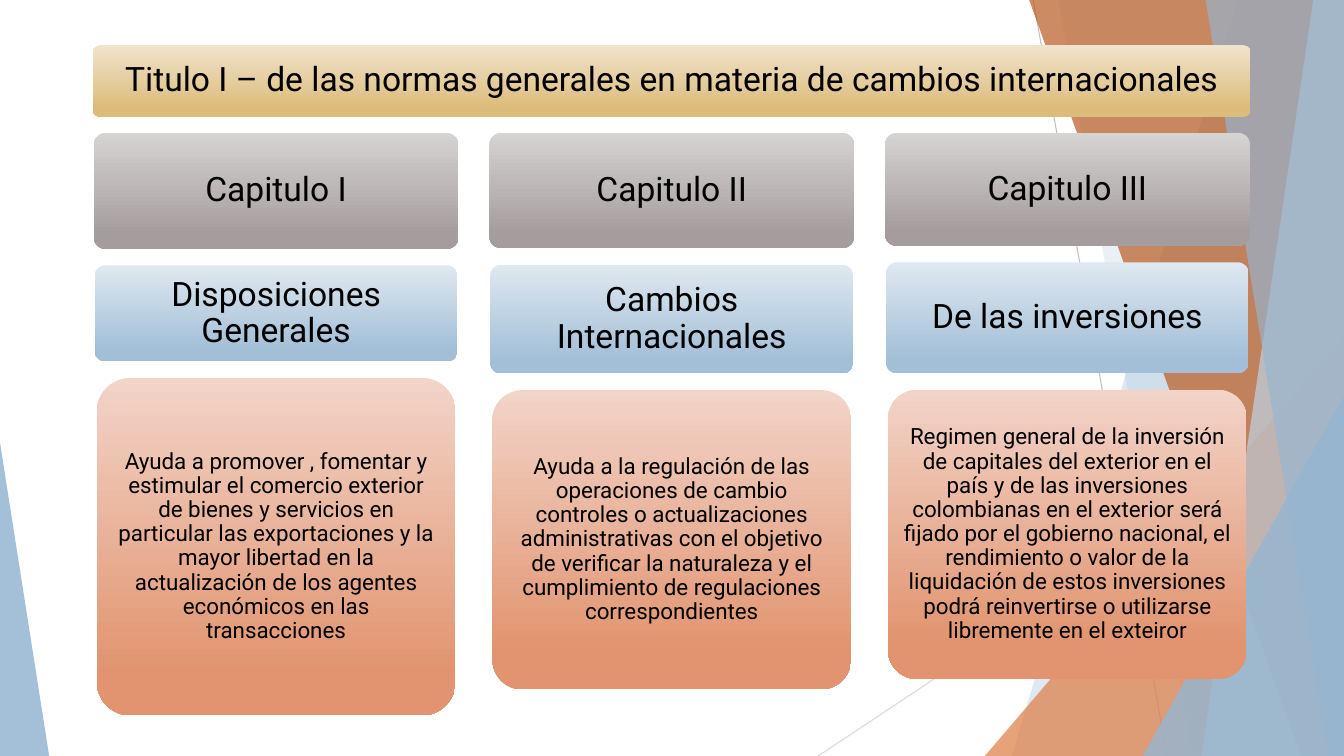
"""Build a slide of three chapter columns under a title bar."""
from lxml.etree import SubElement
from pptx import Presentation
from pptx.dml.color import RGBColor
from pptx.enum.shapes import MSO_CONNECTOR, MSO_SHAPE
from pptx.enum.text import MSO_ANCHOR, PP_ALIGN
from pptx.oxml.ns import qn
from pptx.util import Cm, Pt

TITLE = "Titulo I – de las normas generales en materia de cambios internacionales"
CHAPTERS = [
    {"heights": (2.92, 2.41, 8.51), "texts": (
        "Capitulo I",
        "Disposiciones Generales",
        "Ayuda a promover , fomentar y estimular el comercio exterior de bienes y "
        "servicios en particular las exportaciones y la mayor libertad en la "
        "actualización de los agentes económicos en las transacciones")},
    {"heights": (2.9, 2.74, 7.54), "texts": (
        "Capitulo II",
        "Cambios Internacionales",
        "Ayuda a la regulación de las operaciones de cambio controles o "
        "actualizaciones administrativas con el objetivo de verificar la naturaleza "
        "y el cumplimiento de regulaciones correspondientes")},
    {"heights": (2.84, 2.79, 7.29), "texts": (
        "Capitulo III",
        "De las inversiones",
        "Regimen general de la inversión de capitales del exterior en el país y de "
        "las inversiones colombianas en el exterior será fijado por el gobierno "
        "nacional, el rendimiento o valor de la liquidación de estos inversiones "
        "podrá reinvertirse o utilizarse libremente en el exteiror")},
]
THEME = {
    "font": "Roboto", "text": "000000", "heading": 24, "body": 16,
    "title": ("F0E3CD", "DCBC7B"),
    "rows": (("D6D3D3", "A59D9D"), ("DFE8F0", "A3BFD7"), ("F2D4C9", "E1946F")),
    "blue": "94B6D2", "pale": "BFD3E4", "orange": "DD8047", "brown": "B95B22",
    "line": "BFBFBF", "light_line": "D9D9D9",
}
WIDTH, HEIGHT = 33.87, 19.05
LINES = [(26.04, 0, 29.41, HEIGHT, "line"), (WIDTH, 10.24, 20.62, HEIGHT, "light_line")]
DECOR = [
    ("band", (31.19, 25.5), "blue", 30),
    ("band", (26.67, 30.05), "blue", 20),
    ("triangle", (24.82, 8.46, 9.05, 10.59, 1), "orange", 72),
    ("band", (25.93, 32.79), "brown", 70),
    ("band", (33.1, 30.28), "pale", 70),
    ("band", (30.38, 33.48), "blue", 65),
    ("triangle", (28.8, 9.98, 5.07, 9.07, 1), "blue", 80),
    ("triangle", (0, 11.15, 1.24, 7.9, 0), "blue", 85),
]
TITLE_BOX = (2.34, 1.14, 29.18, 1.8)
FIRST_CENTER, PITCH, FIRST_TOP, GAP = 6.96, 9.97, 3.35, 0.42
ROW_WIDTHS = (9.19, 9.14, 9.04)


def color(name):
    return RGBColor.from_string(THEME.get(name, name))


def add_line(page, left, top, right, bottom, name):
    line = page.shapes.add_connector(
        MSO_CONNECTOR.STRAIGHT, Cm(left), Cm(top), Cm(right), Cm(bottom))
    line.line.color.rgb = color(name)
    line.line.width = Pt(0.75)
    SubElement(line._element.spPr, qn("a:effectLst"))


def add_band(page, top_left, bottom_left):
    builder = page.shapes.build_freeform(Cm(top_left), Cm(-0.02))
    corners = [(WIDTH, -0.02), (WIDTH, HEIGHT), (bottom_left, HEIGHT)]
    builder.add_line_segments([(Cm(x), Cm(y)) for x, y in corners], close=True)
    return builder.convert_to_shape()


def add_triangle(page, left, top, width, height, apex):
    shape = page.shapes.add_shape(
        MSO_SHAPE.ISOSCELES_TRIANGLE, Cm(left), Cm(top), Cm(width), Cm(height))
    shape.adjustments[0] = apex
    return shape


def add_decor(page, kind, geometry, name, opacity):
    shape = {"band": add_band, "triangle": add_triangle}[kind](page, *geometry)
    shape.shadow.inherit = False
    shape.line.fill.background()
    shape.fill.solid()
    shape.fill.fore_color.rgb = color(name)
    for tint in shape._element.spPr.iter(qn("a:srgbClr")):
        SubElement(tint, qn("a:alpha"), val=str(opacity * 1000))


def add_card(page, box, text, colors, size, inset):
    card = page.shapes.add_shape(MSO_SHAPE.ROUNDED_RECTANGLE, *map(Cm, box))
    card.adjustments[0] = 0.1
    card.shadow.inherit = False
    card.line.fill.background()
    card.fill.gradient()
    card.fill.gradient_angle = 270
    for stop, name, position in zip(card.fill.gradient_stops, colors, (0, 0.88)):
        stop.color.rgb = color(name)
        stop.position = position
    frame = card.text_frame
    para = frame.paragraphs[0]
    span = para.add_run()
    formats = [
        (frame, {"word_wrap": True, "vertical_anchor": MSO_ANCHOR.MIDDLE}),
        (frame, {f"margin_{side}": Cm(inset) for side in ("left", "top", "right", "bottom")}),
        (para, {"alignment": PP_ALIGN.CENTER, "line_spacing": 0.9}),
        (span, {"text": text}),
        (span.font, {"name": THEME["font"], "size": Pt(size)}),
        (span.font.color, {"rgb": color("text")}),
    ]
    for target, values in formats:
        for key, value in values.items():
            setattr(target, key, value)


def main():
    deck = Presentation()
    deck.slide_width, deck.slide_height = Cm(WIDTH), Cm(HEIGHT)
    page = deck.slides.add_slide(deck.slide_layouts[6])
    for line in LINES:
        add_line(page, *line)
    for decor in DECOR:
        add_decor(page, *decor)
    add_card(page, TITLE_BOX, TITLE, THEME["title"], THEME["heading"], 0.25)
    styles = [(THEME["heading"], 0.25), (THEME["heading"], 0.25), (THEME["body"], 0.18)]
    for column, chapter in enumerate(CHAPTERS):
        center, top = FIRST_CENTER + column * PITCH, FIRST_TOP
        rows = zip(chapter["texts"], chapter["heights"], ROW_WIDTHS, THEME["rows"], styles)
        for text, height, width, colors, style in rows:
            box = (center - width / 2, top, width, height)
            add_card(page, box, text, colors, *style)
            top += height + GAP
    deck.save("out.pptx")


if __name__ == "__main__":
    main()
